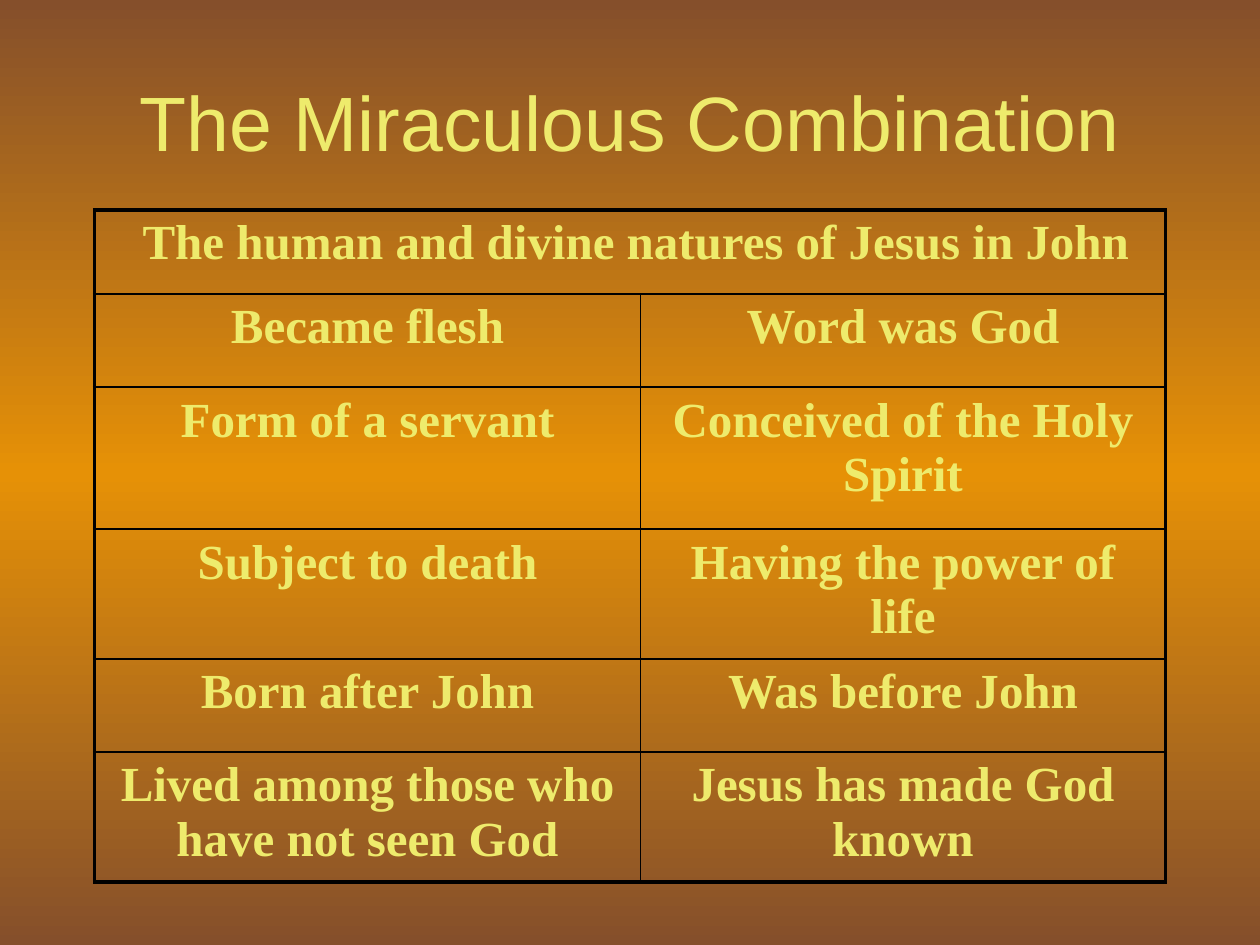
from copy import deepcopy

from lxml import etree
from pptx import Presentation
from pptx.dml.color import RGBColor
from pptx.enum import text
from pptx.oxml import ns
from pptx.util import Pt

YELLOW = "EEEB6C"
BLACK = "000000"
BROWN = "854F2B"
ORANGE = "E69106"
THIN, THICK = 1, 2.25
COLUMN_WIDTHS = [312, 300]
ROW_HEIGHTS = [48, 53.2, 81.2, 74.2, 53.2, 74.2]
HEADING = " The human and divine natures of Jesus in John"
NATURES = [
    ("Became flesh", "Word was God"),
    ("Form of a servant", "Conceived of the Holy Spirit"),
    ("Subject to death", "Having the power of life"),
    ("Born after John", "Was before John"),
    ("Lived among those who have not seen God", "Jesus has made God known"),
]


def colour(value):
    return RGBColor.from_string(value)


def write(frame, words, font, size, bold=False, anchor=text.MSO_ANCHOR.TOP):
    frame.word_wrap = True
    frame.vertical_anchor = anchor
    paragraph = frame.paragraphs[0]
    paragraph.alignment = text.PP_ALIGN.CENTER
    paragraph.space_before = Pt(0)
    span = paragraph.add_run()
    span.text = words
    span.font.name = font
    span.font.size = Pt(size)
    span.font.bold = bold
    span.font.color.rgb = colour(YELLOW)


def paint_background(page):
    fill = page.background.fill
    fill.gradient()
    fill.gradient_angle = 270
    stops = page.element.find(".//" + ns.qn("a:gsLst"))
    stops.insert(1, deepcopy(stops[0]))
    for stop, position, shade in zip(
        fill.gradient_stops, (0, 0.5, 1), (BROWN, ORANGE, BROWN)
    ):
        stop.position = position
        stop.color.rgb = colour(shade)


def add_title(page, words):
    box = page.shapes.title
    box.left, box.top, box.width, box.height = Pt(0), Pt(24), Pt(720), Pt(90)
    frame = box.text_frame
    frame.auto_size = text.MSO_AUTO_SIZE.NONE
    write(frame, words, "Arial", 44, anchor=text.MSO_ANCHOR.MIDDLE)


def set_borders(cell, **widths):
    properties = cell._tc.get_or_add_tcPr()
    for side in "LRTB":
        line = etree.SubElement(
            properties, ns.qn("a:ln" + side), w=str(Pt(widths[side]))
        )
        fill = etree.SubElement(line, ns.qn("a:solidFill"))
        etree.SubElement(fill, ns.qn("a:srgbClr"), val=BLACK)


def format_cell(cell, words, **widths):
    set_borders(cell, **widths)
    cell.fill.background()
    cell.margin_left = cell.margin_right = Pt(7.2)
    cell.margin_top = cell.margin_bottom = Pt(3.6)
    write(cell.text_frame, words, "Times New Roman", 28, bold=True)


def add_natures_table(page):
    rows = [(HEADING,)] + NATURES
    table = page.shapes.add_table(
        len(rows), 2, Pt(54), Pt(120), Pt(sum(COLUMN_WIDTHS)), Pt(sum(ROW_HEIGHTS))
    ).table
    table.first_row = table.horz_banding = False
    for column, width in zip(table.columns, COLUMN_WIDTHS):
        column.width = Pt(width)
    for row, height in zip(table.rows, ROW_HEIGHTS):
        row.height = Pt(height)
    table.cell(0, 0).merge(table.cell(0, 1))
    for row, labels in enumerate(rows):
        for column, words in enumerate(labels):
            format_cell(
                table.cell(row, column),
                words,
                L=THICK if column == 0 else THIN,
                R=THICK if column == len(labels) - 1 else THIN,
                T=THICK if row == 0 else THIN,
                B=THICK if row == len(rows) - 1 else THIN,
            )


def main():
    deck = Presentation()
    deck.slide_width, deck.slide_height = Pt(720), Pt(540)
    page = deck.slides.add_slide(deck.slide_layouts[5])
    paint_background(page)
    add_title(page, "The Miraculous Combination")
    add_natures_table(page)
    deck.save("out.pptx")


if __name__ == "__main__":
    main()
